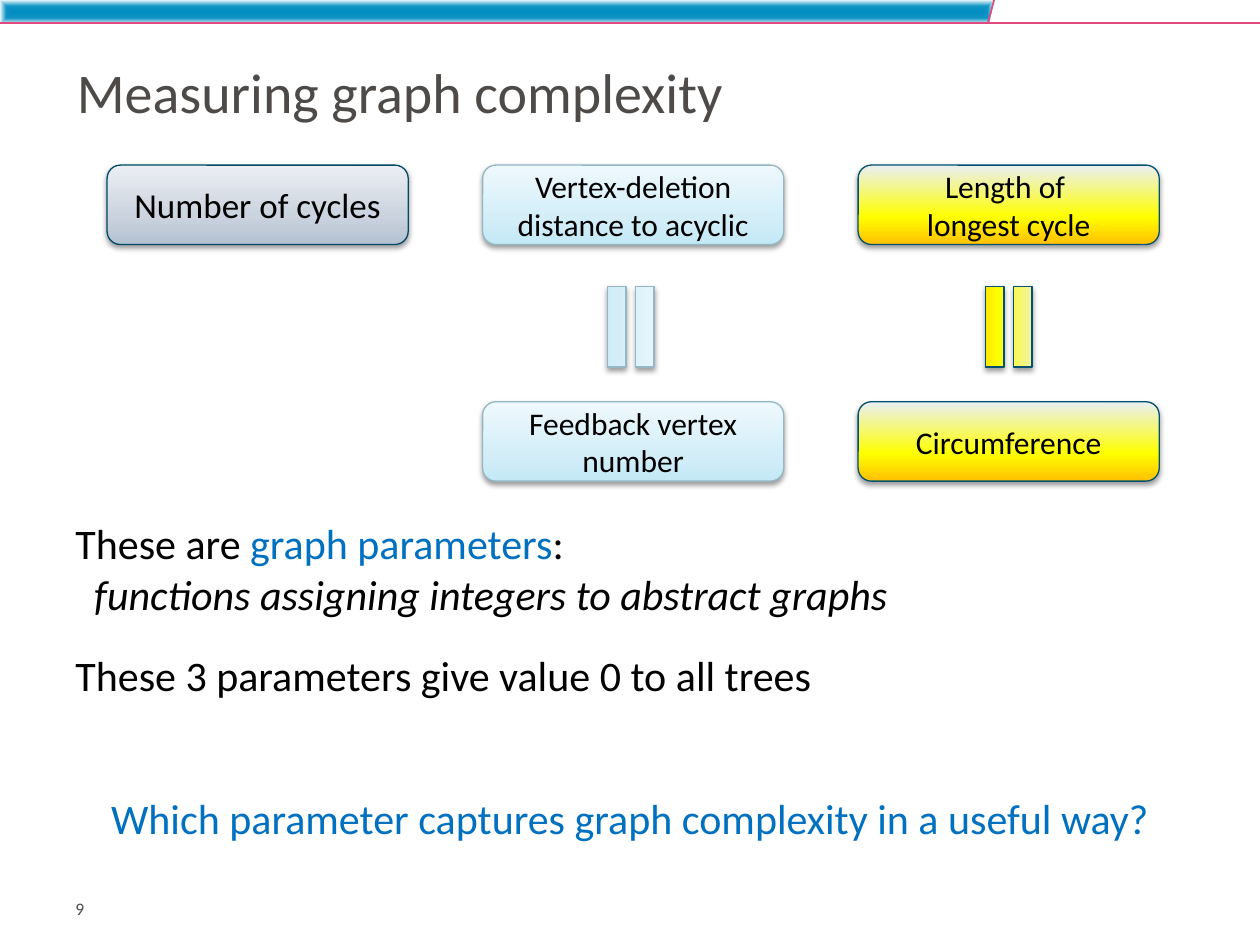
"""Build the slide on measuring graph complexity."""
import lxml.etree
import pptx
import pptx.dml.color
import pptx.enum.shapes
import pptx.enum.text
import pptx.oxml.ns
import pptx.util

Cm = pptx.util.Cm
Pt = pptx.util.Pt
RGBColor = pptx.dml.color.RGBColor
Shape = pptx.enum.shapes.MSO_SHAPE
Align = pptx.enum.text.PP_ALIGN
Anchor = pptx.enum.text.MSO_ANCHOR
qn = pptx.oxml.ns.qn
sub = lxml.etree.SubElement

BLACK = RGBColor(0x00, 0x00, 0x00)
GREY = RGBColor(0x4E, 0x4A, 0x48)
BLUE = RGBColor(0x00, 0x70, 0xC0)
PINK = RGBColor(0xE2, 0x49, 0x7F)
PALE = RGBColor(0xEE, 0xF9, 0xFD)
BAND = [(0, RGBColor(0x03, 0x8C, 0xC0)), (49, RGBColor(0x0F, 0x94, 0xC4)), (100, PALE)]
STEEL = [(0, RGBColor(0xB3, 0xC1, 0xD1)), (35, RGBColor(0xCA, 0xD3, 0xDE)),
         (100, RGBColor(0xEB, 0xEF, 0xF3))]
SKY = [(0, RGBColor(0xC3, 0xE8, 0xF6)), (35, RGBColor(0xD4, 0xEE, 0xF8)), (100, PALE)]
GOLD = [(0, RGBColor(0xFF, 0xC0, 0x00)), (35, RGBColor(0xFF, 0xFF, 0x00)),
        (100, RGBColor(0xEA, 0xEF, 0xF4))]
STEEL_EDGE = RGBColor(0x00, 0x49, 0x66)
SKY_EDGE = RGBColor(0x95, 0xB7, 0xC4)
GOLD_EDGE = RGBColor(0x00, 0x52, 0x70)


def paint(shape, stops, edge=None):
    shape.shadow.inherit = False
    shape.fill.gradient()
    props = shape.element.spPr
    grad = props.find(qn("a:gradFill"))
    grad[:] = []
    group = sub(grad, qn("a:gsLst"))
    for place, color in stops:
        stop = sub(group, qn("a:gs"), pos=str(place * 1000))
        sub(stop, qn("a:srgbClr"), val=str(color))
    if edge is None:
        shape.line.fill.background()
        way = sub(grad, qn("a:path"), {"path": "shape"})
        sub(way, qn("a:fillToRect"), dict.fromkeys("ltrb", "50000"))
        return
    sub(grad, qn("a:lin"), ang="16200000", scaled="0")
    shape.line.color.rgb = edge
    shape.line.width = Pt(0.75)
    shade = sub(props.find(qn("a:effectLst")), qn("a:outerShdw"), blurRad="40000",
                dist="20000", dir="5400000", rotWithShape="0")
    tint = sub(shade, qn("a:srgbClr"), val=str(BLACK))
    sub(tint, qn("a:alpha"), val="38000")


def style(frame, size, color):
    frame.word_wrap = True
    for para in frame.paragraphs:
        for run in para.runs:
            run.font.name = "Calibri"
            run.font.size = Pt(size)
            run.font.color.rgb = color


deck = pptx.Presentation()
deck.slide_width = Cm(25.4)
deck.slide_height = Cm(19.05)
shapes = deck.slides.add_slide(deck.slide_layouts[6]).shapes

pen = shapes.build_freeform(0, 0)
pen.add_line_segments([(Cm(20.04), 0), (Cm(19.93), Cm(0.49)), (0, Cm(0.49))])
paint(pen.convert_to_shape(), BAND)

for ends in [(20.04, 0, 19.91, 0.48), (25.4, 0.46, 0, 0.46)]:
    rule = shapes.add_connector(pptx.enum.shapes.MSO_CONNECTOR.STRAIGHT, *map(Cm, ends))
    rule.line.color.rgb = PINK
    rule.line.width = Pt(1)
    sub(rule.element.spPr, qn("a:effectLst"))

title = shapes.add_textbox(Cm(1.3), Cm(0.97), Cm(22.86), Cm(1.75)).text_frame
title.text = "Measuring graph complexity"
title.vertical_anchor = Anchor.MIDDLE
style(title, 32, GREY)

body = shapes.add_textbox(Cm(1.27), Cm(10.31), Cm(22.86), Cm(4.19)).text_frame
body.text = ("These are \nfunctions assigning integers to abstract graphs\n"
             "These 3 parameters give value 0 to all trees")
intro, gloss, trees = body.paragraphs
term = intro.add_run()
term.text = "graph parameters"
intro.add_run().text = ":"
style(body, 24, BLACK)
term.font.color.rgb = BLUE
gloss.runs[0].font.italic = True
gloss._p.get_or_add_pPr().set("marL", str(Cm(0.38)))
trees.space_before = Pt(18)

page = shapes.add_textbox(Cm(1.27), Cm(18.11), Cm(5.44), Cm(0.76)).text_frame
page.text = "9"
page.margin_top = 0
style(page, 10, GREY)

left, top, step, drop = 2.16, 3.33, 7.57, 4.77
cards = [
    (0, 0, "Number of cycles", 20, STEEL, STEEL_EDGE),
    (1, 0, "Vertex-deletion distance to acyclic", 18, SKY, SKY_EDGE),
    (2, 0, "Length of \vlongest cycle", 18, GOLD, GOLD_EDGE),
    (1, 1, "Feedback vertex number", 18, SKY, SKY_EDGE),
    (2, 1, "Circumference", 18, GOLD, GOLD_EDGE),
]
for col, row, text, size, stops, edge in cards:
    card = shapes.add_shape(Shape.ROUNDED_RECTANGLE, Cm(left + col * step),
                            Cm(top + row * drop), Cm(6.07), Cm(1.6))
    paint(card, stops, edge)
    frame = card.text_frame
    frame.text = text
    frame.vertical_anchor = Anchor.MIDDLE
    for para in frame.paragraphs:
        para.alignment = Align.CENTER
    style(frame, size, BLACK)

for x, stops, edge in [(11.61, SKY, SKY_EDGE), (19.23, GOLD, GOLD_EDGE)]:
    equal = shapes.add_shape(Shape.MATH_EQUAL, Cm(x), Cm(5.79), Cm(2.21), Cm(1.6))
    equal.rotation = 90
    paint(equal, stops, edge)

query = shapes.add_textbox(Cm(1.27), Cm(15.85), Cm(22.86), Cm(1.5)).text_frame
query.text = "Which parameter captures graph complexity in a useful way?"
query.paragraphs[0].alignment = Align.CENTER
style(query, 24, BLUE)

deck.save("out.pptx")
